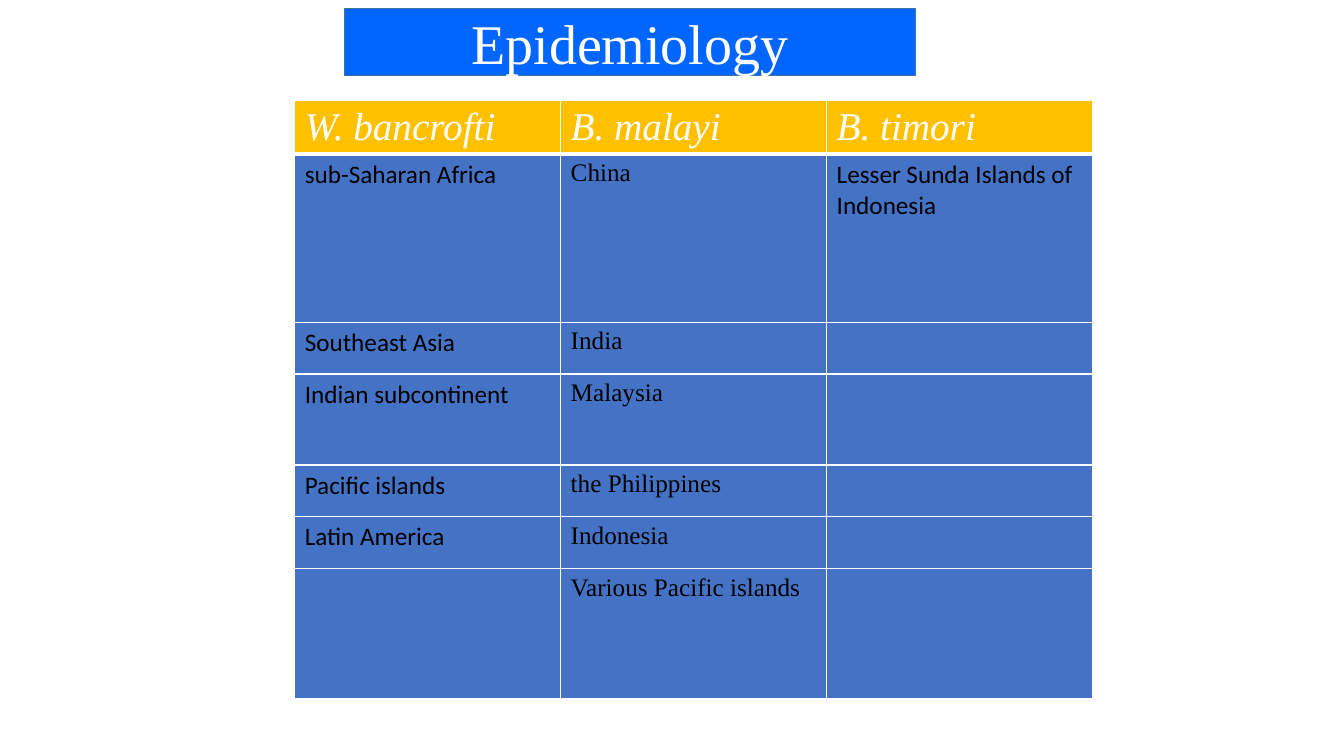
from lxml.etree import SubElement
from pptx import Presentation
from pptx.dml.color import RGBColor
from pptx.enum.shapes import MSO_SHAPE as SHAPE
from pptx.enum.text import MSO_ANCHOR as ANCHOR, PP_ALIGN as ALIGN
from pptx.oxml.ns import qn
from pptx.util import Pt

SERIF, SANS = "Times New Roman", "Calibri"
WHITE, BLACK, GOLD, BLUE = "FFFFFF", "000000", "FFC000", "4472C4"
COLUMN_WIDTH = 190
ROW_HEIGHTS = [37, 120, 37, 65, 37, 37, 93]
BODY_FONTS = [SANS, SERIF, SANS]
SPECIES = ["W. bancrofti", "B. malayi", "B. timori"]
REGIONS = [
    ["sub-Saharan Africa", "China", "Lesser Sunda Islands of Indonesia"],
    ["Southeast Asia", "India", ""],
    ["Indian subcontinent", "Malaysia", ""],
    ["Pacific islands", "the Philippines", ""],
    ["Latin America", "Indonesia", ""],
    ["", "Various Pacific islands", ""],
]


def paint(fmt, color):
    """Give a fill a solid colour."""
    fmt.solid()
    fmt.fore_color.rgb = RGBColor.from_string(color)


def add_run(p, text, size, font, color, italic=False):
    """Append a styled run to a paragraph."""
    r = p.add_run()
    r.text = text
    r.font.size = Pt(size)
    r.font.name = font
    r.font.italic = italic
    paint(r.font.fill, color)


def set_borders(cell, bottom):
    """Draw white cell borders, with the bottom width in points."""
    tc_pr = cell._tc.get_or_add_tcPr()
    widths = {"lnL": 1, "lnR": 1, "lnT": 1, "lnB": bottom}
    for side, width in widths.items():
        ln = SubElement(tc_pr, qn(f"a:{side}"), w=str(Pt(width)))
        fill = SubElement(ln, qn("a:solidFill"))
        SubElement(fill, qn("a:srgbClr"), val=WHITE)


def fill_cell(cell, text, fill, size, font, color, italic=False, bottom=1):
    """Write and style one table cell."""
    set_borders(cell, bottom)
    paint(cell.fill, fill)
    if text:
        add_run(cell.text_frame.paragraphs[0], text, size, font, color, italic)


def add_region_table(s, left, top):
    """Add the table of regions for each species."""
    width = COLUMN_WIDTH * len(SPECIES)
    table = s.shapes.add_table(len(ROW_HEIGHTS), len(SPECIES), Pt(left), Pt(top),
                               Pt(width), Pt(sum(ROW_HEIGHTS))).table
    for column in table.columns:
        column.width = Pt(COLUMN_WIDTH)
    for row, height in zip(table.rows, ROW_HEIGHTS):
        row.height = Pt(height)
    for col, name in enumerate(SPECIES):
        fill_cell(table.cell(0, col), name, GOLD, 28, SERIF, WHITE, True, 3)
    for row, regions in enumerate(REGIONS, 1):
        for col, region in enumerate(regions):
            fill_cell(table.cell(row, col), region, BLUE, 18, BODY_FONTS[col], BLACK)


def add_title(s, text, left, top, width, height):
    """Add the title rectangle."""
    sp = s.shapes.add_shape(SHAPE.RECTANGLE, Pt(left), Pt(top), Pt(width), Pt(height))
    sp.shadow.inherit = False
    paint(sp.fill, "0066FF")
    paint(sp.line.fill, "43739E")
    sp.line.width = Pt(1)
    tf = sp.text_frame
    tf.word_wrap = True
    tf.vertical_anchor = ANCHOR.MIDDLE
    p = tf.paragraphs[0]
    p.alignment = ALIGN.CENTER
    add_run(p, text, 40, SERIF, WHITE)


def main():
    """Build and save the slide."""
    prs = Presentation()
    prs.slide_width, prs.slide_height = Pt(960), Pt(540)
    s = prs.slides.add_slide(prs.slide_layouts[6])
    add_region_table(s, 210.5, 72)
    add_title(s, "Epidemiology", 246, 6, 408, 48)
    prs.save("out.pptx")


if __name__ == "__main__":
    main()
